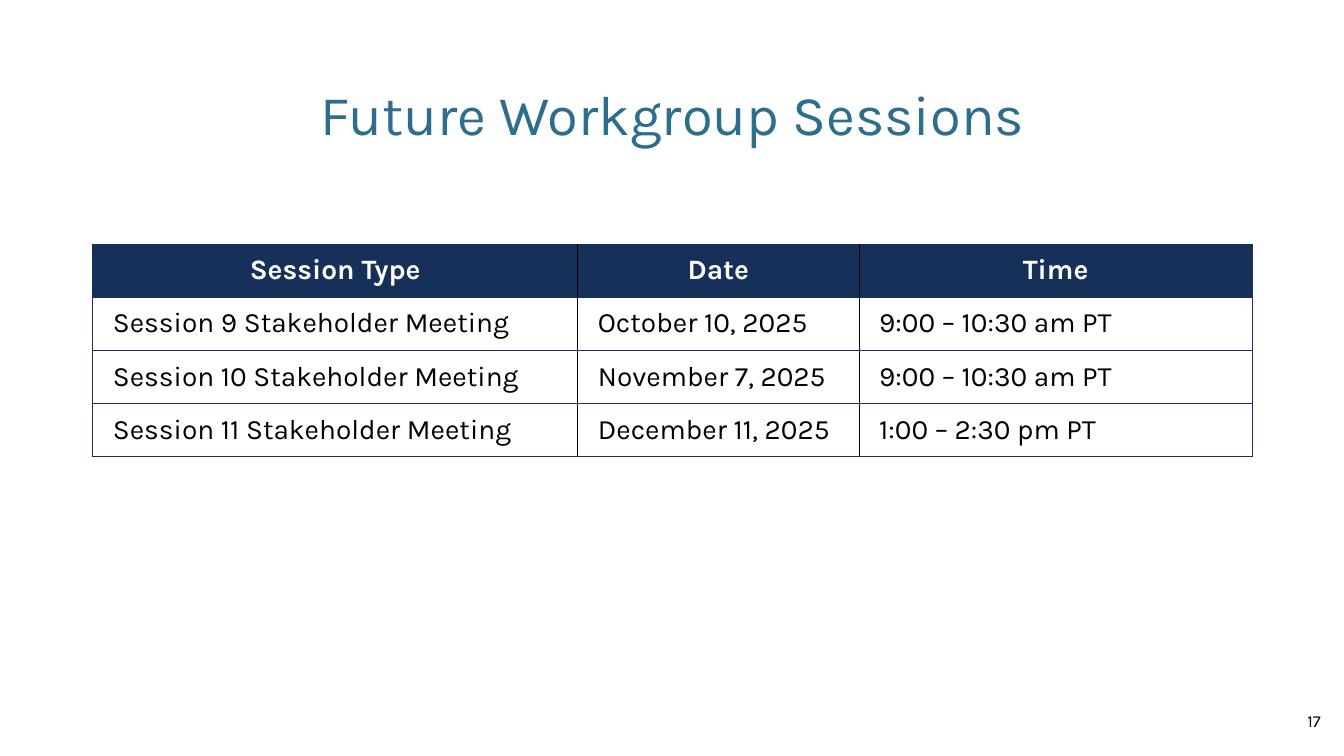
from lxml import etree
from pptx import Presentation
from pptx.dml.color import RGBColor
from pptx.enum.text import MSO_ANCHOR, MSO_AUTO_SIZE, PP_ALIGN
from pptx.oxml.ns import qn
from pptx.util import Inches, Pt

LEFT, CENTER, RIGHT = PP_ALIGN.LEFT, PP_ALIGN.CENTER, PP_ALIGN.RIGHT
MIDDLE = MSO_ANCHOR.MIDDLE
NO_AUTOFIT = MSO_AUTO_SIZE.NONE

TEAL = RGBColor(0x2D, 0x6E, 0x8D)
NAVY = RGBColor(0x17, 0x30, 0x59)
BLACK = RGBColor(0x00, 0x00, 0x00)
WHITE = RGBColor(0xFF, 0xFF, 0xFF)

FONT = "Karla"
TITLE_ONLY = 5
BORDER_WIDTH = Pt(0.5)

TITLE_FORMAT = {"name": FONT, "size": Pt(40), "bold": False}
HEADER_FORMAT = {"name": FONT, "size": Pt(20), "bold": True}
BODY_FORMAT = {"name": FONT, "size": Pt(20), "bold": False}
NUMBER_FORMAT = {"name": FONT, "size": Pt(12), "bold": False}
FRAME_FORMAT = {"word_wrap": True, "auto_size": NO_AUTOFIT, "vertical_anchor": MIDDLE}
CELL_FORMAT = {
    "margin_left": Inches(0.2),
    "margin_right": Inches(0.2),
    "margin_top": Inches(0.1),
    "margin_bottom": Inches(0.1),
    "vertical_anchor": MIDDLE,
}

COLUMN_WIDTHS = [4.81, 2.79, 3.9]
SESSIONS = [
    ("Session Type", "Date", "Time"),
    ("Session 9 Stakeholder Meeting", "October 10, 2025", "9:00 – 10:30 am PT"),
    ("Session 10 Stakeholder Meeting", "November 7, 2025", "9:00 – 10:30 am PT"),
    ("Session 11 Stakeholder Meeting", "December 11, 2025", "1:00 – 2:30 pm PT"),
]


def apply_format(target, values):
    for name, value in values.items():
        setattr(target, name, value)


def write_text(frame, text, values, color, alignment):
    para = frame.paragraphs[0]
    para.alignment = alignment
    span = para.add_run()
    span.text = text
    apply_format(span.font, values)
    span.font.color.rgb = color


def place(shape, box):
    shape.left, shape.top, shape.width, shape.height = map(Inches, box)


def add_title(page, box):
    title = page.shapes.title
    place(title, box)
    apply_format(title.text_frame, FRAME_FORMAT)
    write_text(title.text_frame, "Future Workgroup Sessions", TITLE_FORMAT, TEAL, CENTER)


def set_borders(cell, colors):
    properties = cell._tc.get_or_add_tcPr()
    for side, color in colors.items():
        line = etree.SubElement(properties, qn(f"a:ln{side}"), w=str(BORDER_WIDTH))
        fill = etree.SubElement(line, qn("a:solidFill"))
        etree.SubElement(fill, qn("a:srgbClr"), val=str(color))


def add_sessions_table(page, box):
    shape = page.shapes.add_table(len(SESSIONS), len(COLUMN_WIDTHS), *map(Inches, box))
    table = shape.table
    last_column = len(COLUMN_WIDTHS) - 1
    for column, width in zip(table.columns, COLUMN_WIDTHS):
        column.width = Inches(width)
    for row_index, values in enumerate(SESSIONS):
        is_header = row_index == 0
        for column_index, text in enumerate(values):
            cell = table.cell(row_index, column_index)
            apply_format(cell, CELL_FORMAT)
            set_borders(cell, {
                "L": NAVY if column_index == 0 else BLACK,
                "R": NAVY if column_index == last_column else BLACK,
                "T": NAVY,
                "B": NAVY,
            })
            cell.fill.solid()
            cell.fill.fore_color.rgb = NAVY if is_header else WHITE
            if is_header:
                write_text(cell.text_frame, text, HEADER_FORMAT, WHITE, CENTER)
            else:
                write_text(cell.text_frame, text, BODY_FORMAT, BLACK, LEFT)


def add_page_number(page, box):
    number = page.shapes.add_textbox(*map(Inches, box))
    apply_format(number.text_frame, FRAME_FORMAT)
    write_text(number.text_frame, "17", NUMBER_FORMAT, BLACK, RIGHT)


def main():
    deck = Presentation()
    deck.slide_width, deck.slide_height = Inches(13.33), Inches(7.5)
    page = deck.slides.add_slide(deck.slide_layouts[TITLE_ONLY])
    add_title(page, (0.92, 0.4, 11.5, 1.45))
    add_sessions_table(page, (0.92, 2.42, 11.5, 2.11))
    add_page_number(page, (10.2, 6.95, 3, 0.4))
    deck.save("out.pptx")


if __name__ == "__main__":
    main()
